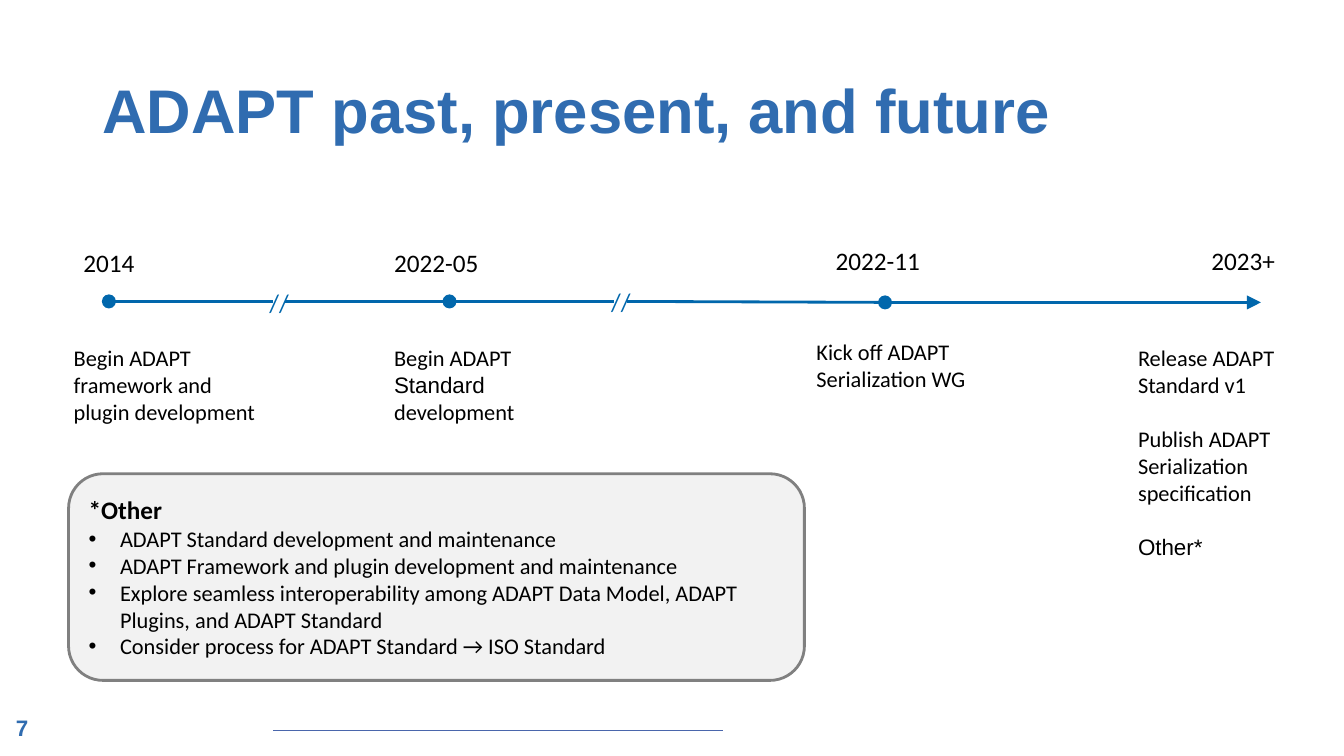
from lxml import etree
from pptx import Presentation
from pptx.dml.color import RGBColor
from pptx.enum.shapes import MSO_CONNECTOR as CONNECTOR, MSO_SHAPE as SHAPE
from pptx.enum.text import MSO_ANCHOR as ANCHOR, MSO_AUTO_SIZE as AUTO_SIZE, PP_ALIGN as ALIGN
from pptx.oxml.ns import qn
from pptx.util import Pt

COLORS = {
    "title": "306CB0", "timeline": "0167AC", "footer": "4A66AC",
    "text": "000000", "panel": "F2F2F2", "border": "808080",
}
rgb = {name: RGBColor.from_string(code) for name, code in COLORS.items()}

prs = Presentation()
prs.slide_width, prs.slide_height = Pt(960), Pt(540)
slide = prs.slides.add_slide(prs.slide_layouts[5])


def add_line(start, end, color="timeline", width=2, head=None, tail=None):
    line = slide.shapes.add_connector(CONNECTOR.STRAIGHT, *map(Pt, start + end))
    line.line.color.rgb = rgb[color]
    line.line.width = Pt(width)
    for tag, kind in (("a:headEnd", head), ("a:tailEnd", tail)):
        if kind:
            etree.SubElement(line.line._ln, qn(tag), type=kind, w="lg", len="lg")
    etree.SubElement(line._element.spPr, qn("a:effectLst"))


def add_label(left, top, width, height, paragraphs, size=16, color="text", align=ALIGN.LEFT):
    """Add a text box; each paragraph is a list of (text, font name) runs."""
    box = slide.shapes.add_textbox(Pt(left), Pt(top), Pt(width), Pt(height))
    frame = box.text_frame
    frame.word_wrap = True
    frame.auto_size = AUTO_SIZE.SHAPE_TO_FIT_TEXT
    frame.margin_left = frame.margin_right = frame.margin_top = frame.margin_bottom = Pt(3.6)
    for i, runs in enumerate(paragraphs):
        paragraph = frame.add_paragraph() if i else frame.paragraphs[0]
        paragraph.alignment = align
        if i:
            paragraph.space_before = Pt(19.5)
        for text, font_name in runs:
            run = paragraph.add_run()
            run.text = text
            run.font.name, run.font.size = font_name, Pt(size)
            run.font.color.rgb = rgb[color]


# Title and footer
add_line((195.1, 522), (516.2, 522), color="footer", width=1)

title = slide.shapes.title
title.left, title.top, title.width, title.height = Pt(66), Pt(28.75), Pt(828), Pt(104.4)
title.text_frame.text = "ADAPT past, present, and future"
title.text_frame.vertical_anchor = ANCHOR.MIDDLE
page_number = slide.shapes.add_textbox(Pt(4.3), Pt(506.2), Pt(39.6), Pt(25.2))
page_number.text_frame.text = "7"
for frame, size in ((title.text_frame, 44), (page_number.text_frame, 16)):
    heading = frame.paragraphs[0]
    heading.alignment = ALIGN.LEFT
    font = heading.runs[0].font
    font.name, font.size, font.bold = "Arial", Pt(size), True
    font.color.rgb = rgb["title"]
title.text_frame.paragraphs[0].line_spacing = 0.9

# Timeline, with a break mark in each gap
AXIS = 215.3
add_line((77.8, AXIS), (195.1, AXIS), head="oval")
add_line((203.8, AXIS), (321.1, AXIS), tail="oval")
add_line((321.1, AXIS), (438.5, AXIS))
add_line((447.8, AXIS), (632.2, 216), tail="oval")
add_line((632.2, 216), (900.7, 216), tail="triangle")
for left, top in ((187.9, 201.6), (432, 200.9)):
    add_label(left, top, 23, 28.8, [[("//", "Calibri")]], 18, "timeline", ALIGN.CENTER)

dates = [
    ("2014", 49, 172.8, 57.6, ALIGN.CENTER),
    ("2022-05", 277.9, 172.8, 77, ALIGN.LEFT),
    ("2022-11", 593.3, 171.4, 77, ALIGN.LEFT),
    ("2023+", 861.8, 171.4, 77, ALIGN.LEFT),
]
for date, left, top, width, align in dates:
    add_label(left, top, width, 28.8, [[(date, "Calibri")]], 18, align=align)

milestones = [
    (49, 242.6, 144.7, 65.5, [[("Begin ADAPT framework and plugin development", "Calibri")]]),
    (277.9, 242.6, 102.2, 65.5,
     [[("Begin ADAPT ", "Calibri"), ("Standard ", "Arial"), ("development", "Calibri")]]),
    (579.6, 238, 117.4, 46, [[("Kick off ADAPT Serialization WG", "Calibri")]]),
    (809.3, 242.6, 138.2, 162.7,
     [[("Release ADAPT Standard v1", "Calibri")],
      [("Publish ADAPT Serialization specification", "Calibri")],
      [("Other*", "Arial")]]),
]
for milestone in milestones:
    add_label(*milestone)

# Panel explaining the "Other" footnote
panel = slide.shapes.add_shape(SHAPE.ROUNDED_RECTANGLE, Pt(49), Pt(338.4), Pt(525.6), Pt(147.6))
panel.shadow.inherit = False
panel.fill.solid()
panel.fill.fore_color.rgb = rgb["panel"]
panel.line.color.rgb = rgb["border"]
panel.line.width = Pt(2)
notes = panel.text_frame
notes.word_wrap = True
notes.vertical_anchor = ANCHOR.MIDDLE
notes.margin_left = notes.margin_right = notes.margin_top = notes.margin_bottom = Pt(7.2)
notes.text = "\n".join([
    "*Other",
    "ADAPT Standard development and maintenance",
    "ADAPT Framework and plugin development and maintenance",
    "Explore seamless interoperability among ADAPT Data Model, ADAPT Plugins, and ADAPT Standard",
    "Consider process for ADAPT Standard → ISO Standard",
])
for i, paragraph in enumerate(notes.paragraphs):
    paragraph.alignment = ALIGN.LEFT
    if i:
        properties = paragraph._p.get_or_add_pPr()
        properties.set("marL", str(Pt(22.5)))
        properties.set("indent", str(-Pt(22.5)))
        etree.SubElement(properties, qn("a:buFont"), typeface="Arial")
        etree.SubElement(properties, qn("a:buChar"), char="•")
    font = paragraph.runs[0].font
    font.name, font.size, font.bold = "Calibri", Pt(16 if i else 18), i == 0
    font.color.rgb = rgb["text"]

prs.save("out.pptx")
